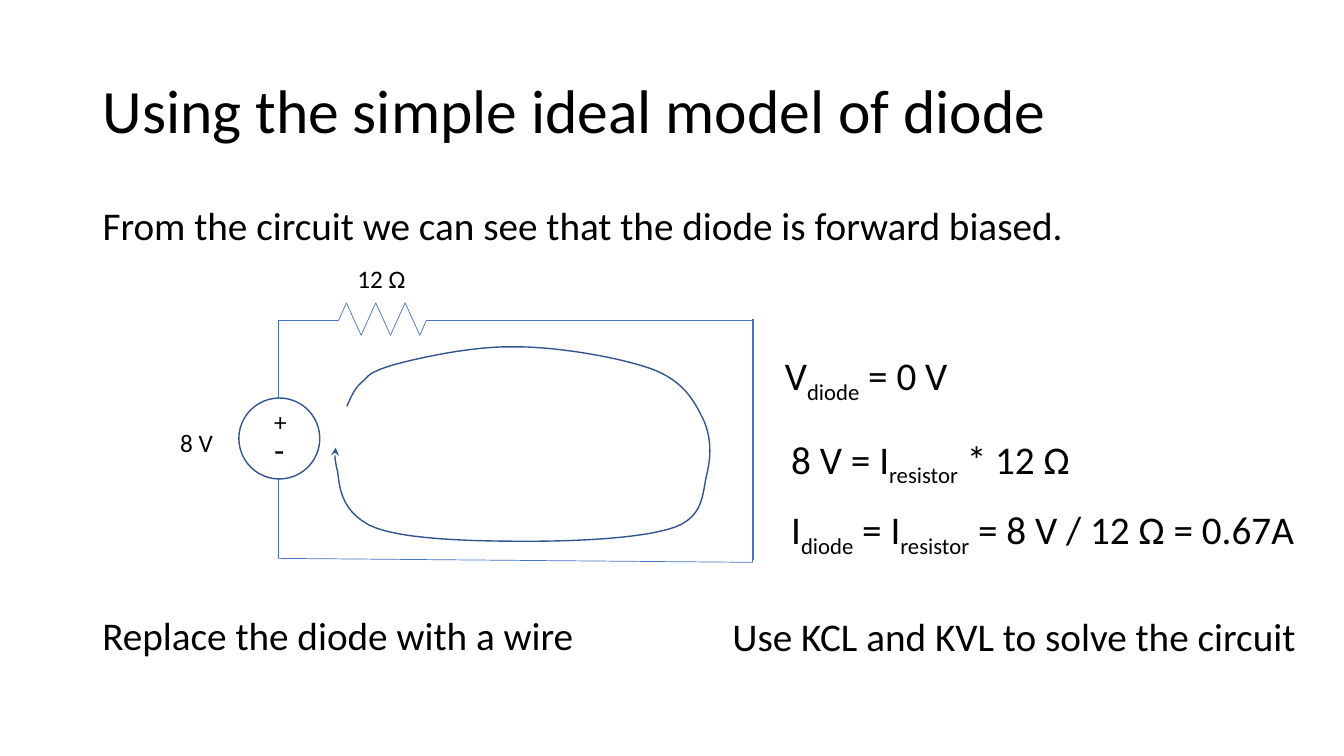
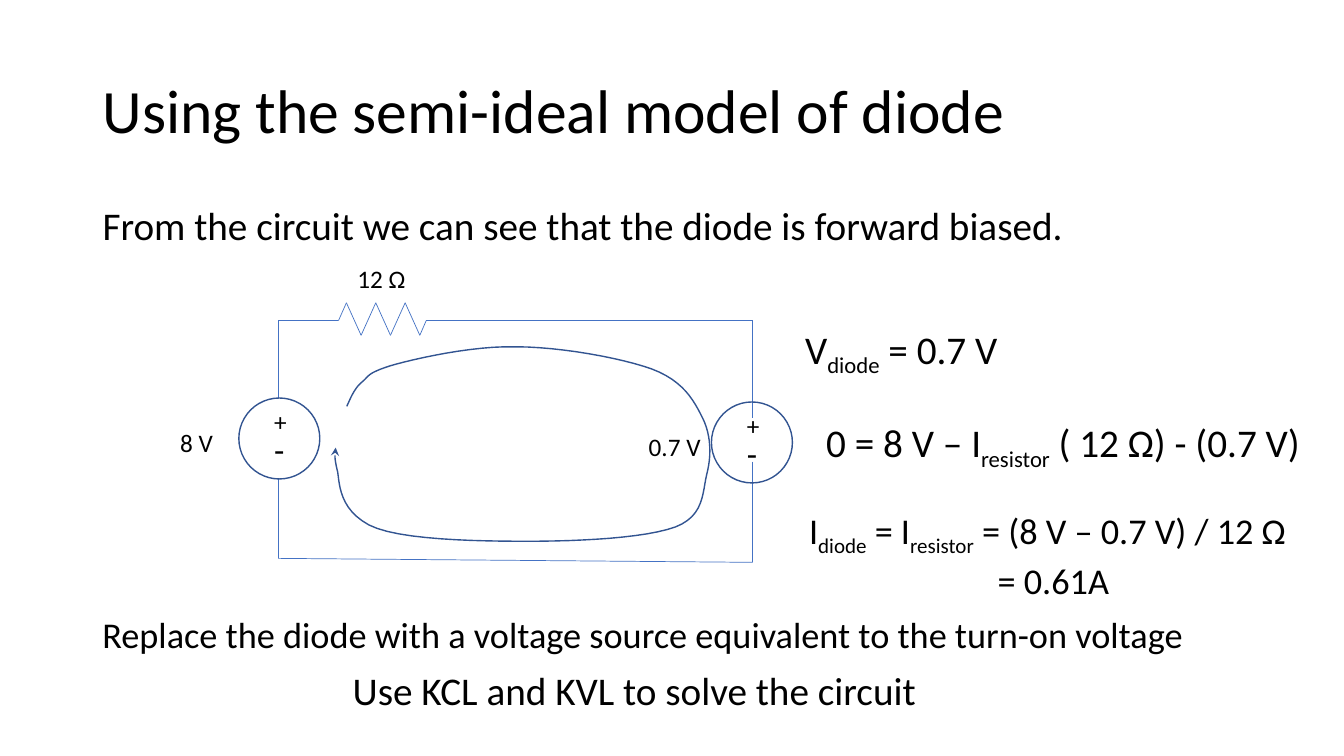
from itertools import pairwise

from lxml import etree
from pptx import Presentation
from pptx.dml.color import RGBColor
from pptx.enum import shapes, text
from pptx.oxml.ns import qn
from pptx.util import Cm, Pt

COLORS = {"text": "000000", "wire": "4472C4", "outline": "325491"}
FONT = "Calibri"

# Boxes are left, top, width, height in cm
TITLE_BOX = (2.33, 1.02, 29.21, 3.68)
INTRO_BOX = (2.33, 5.08, 29.21, 1.37)
INTRO = "From the circuit we can see that the diode is forward biased."
SOLVE = "Use KCL and KVL to solve the circuit"

# A line of text alternates between normal and subscript pieces
SLIDES = [
    {
        "title": "Using the simple ideal model of diode",
        "diode": "wire",
        "notes": [
            {"box": (2.33, 15.42, 13.34, 1.6), "lines": [("Replace the diode with a wire",)]},
            {"box": (19.53, 8.74, 13.72, 1.8), "lines": [("V", "diode", " = 0 V")]},
            {"box": (19.69, 10.85, 10.29, 1.8), "lines": [("8 V = I", "resistor", " * 12 Ω")]},
            {"box": (19.69, 12.62, 13.72, 1.8),
             "lines": [("I", "diode", " = I", "resistor", " = 8 V / 12 Ω = 0.67A")]},
            {"box": (18.21, 15.44, 15.06, 1.6), "lines": [(SOLVE,)]},
        ],
    },
    {
        "title": "Using the semi-ideal model of diode",
        "diode": "source",
        "notes": [
            {"box": (2.33, 15.42, 29.21, 1.37), "size": 25.9,
             "lines": [("Replace the diode with a voltage source equivalent to the turn-on voltage",)]},
            {"box": (20.04, 8.08, 7.42, 1.8), "lines": [("V", "diode", " = 0.7 V")]},
            {"box": (20.57, 10.44, 13.06, 1.57),
             "lines": [("0 = 8 V – I", "resistor", " ( 12 Ω) - (0.7 V)")]},
            {"box": (20.14, 12.8, 13.72, 2.51), "size": 25.9, "spacing": 0.8, "last_indent": 4.75,
             "lines": [("I", "diode", " = I", "resistor", " = (8 V – 0.7 V) / 12 Ω"), ("= 0.61A",)]},
            {"box": (8.64, 16.79, 15.06, 1.6), "lines": [(SOLVE,)]},
        ],
    },
]

LEFT, RIGHT, TOP = 7.01, 18.97, 8.08
RESISTOR_START, RESISTOR_END = 8.53, 10.74
WIRES = [
    ((LEFT, TOP), (LEFT, 10.03)),
    ((LEFT, 12.07), (LEFT, 14.07)),
    ((LEFT, TOP), (RESISTOR_START, TOP)),
    ((RESISTOR_END, TOP), (RIGHT, TOP)),
    ((LEFT, 14.07), (RIGHT, 14.17)),
    ((RIGHT, TOP), (RIGHT, 10.54)),
    ((RIGHT, 11.63), (RIGHT, 14.15)),
]
DIODE_WIRE = ((RIGHT, 8.03), (RIGHT, 14.12))
PEAK, VALLEY, HALF_WAVE = 7.63, 8.45, 0.37
ZIGZAG = [
    (RESISTOR_START, TOP),
    *((8.73 + HALF_WAVE * i, VALLEY if i % 2 else PEAK) for i in range(6)),
    (RESISTOR_END, TOP),
]

# The current loop: a start, then two control points and an end per curve
LOOP_START = (8.74, 10.24)
LOOP_CURVES = [
    ((8.84, 10.03), (8.92, 9.8), (9.12, 9.63)),
    ((9.32, 9.47), (9.22, 9.42), (9.83, 9.22)),
    ((10.44, 9.04), (11.91, 8.71), (13, 8.74)),
    ((14.12, 8.74), (15.65, 9.02), (16.43, 9.3)),
    ((17.22, 9.6), (17.48, 10.08), (17.7, 10.52)),
    ((17.93, 10.97), (17.93, 11.51), (17.81, 11.96)),
    ((17.7, 12.42), (17.75, 13), (17.02, 13.28)),
    ((16.26, 13.56), (14.6, 13.64), (13.31, 13.64)),
    ((12.04, 13.64), (10.03, 13.61), (9.3, 13.23)),
    ((8.56, 12.83), (8.56, 12.22), (8.51, 11.89)),
    ((8.43, 11.56), (8.43, 11.48), (8.46, 11.28)),
]
CURVE_STEPS = 12


def rgb(name):
    return RGBColor.from_string(COLORS[name])


def cm(values):
    return [Cm(v) for v in values]


def place(part, box):
    part.left, part.top, part.width, part.height = cm(box)


def style(paragraph, size, spacing=None, before=None):
    font = paragraph.font
    font.name, font.size, font.color.rgb = FONT, Pt(size), rgb("text")
    paragraph.alignment = text.PP_ALIGN.LEFT
    if spacing:
        paragraph.line_spacing = spacing
    if before is not None:
        paragraph.space_before = Pt(before)


def add_label(parent, words, box, size=18):
    frame = parent.add_textbox(*cm(box)).text_frame
    frame.word_wrap = True
    frame.text = words
    style(frame.paragraphs[0], size)


def add_note(slide, box, lines, size=28, spacing=0.9, last_indent=0):
    frame = slide.shapes.add_textbox(*cm(box)).text_frame
    frame.word_wrap = True
    for i, pieces in enumerate(lines):
        paragraph = frame.add_paragraph() if i else frame.paragraphs[0]
        style(paragraph, size, spacing, 10)
        for j, piece in enumerate(pieces):
            run = paragraph.add_run()
            run.text = piece
            if j % 2:
                run._r.get_or_add_rPr().set("baseline", "-25000")
    if last_indent:
        paragraph._p.get_or_add_pPr().set("marL", str(Cm(last_indent)))


def add_wire(parent, start, end, width=0.5):
    wire = parent.add_connector(shapes.MSO_CONNECTOR.STRAIGHT, *cm(start + end))
    wire.line.color.rgb, wire.line.width = rgb("wire"), Pt(width)
    etree.SubElement(wire._element.spPr, qn("a:effectLst"))


def outline(shape):
    shape.shadow.inherit = False
    shape.fill.background()
    shape.line.color.rgb, shape.line.width = rgb("outline"), Pt(1)


def add_source(slide, left, top):
    """Draw a voltage source with its polarity marks."""
    parts = slide.shapes.add_group_shape().shapes
    outline(parts.add_shape(shapes.MSO_SHAPE.OVAL, *cm((left, top, 2.04, 2.04))))
    add_label(parts, "+", (left + 0.64, top + 0.08, 0.91, 1.02))
    add_label(parts, "-", (left + 0.64, top + 0.66, 0.91, 1.27), 24)


def bezier(start, control_1, control_2, end):
    for step in range(1, CURVE_STEPS + 1):
        t = step / CURVE_STEPS
        weights = ((1 - t) ** 3, 3 * t * (1 - t) ** 2, 3 * t * t * (1 - t), t ** 3)
        corners = (start, control_1, control_2, end)
        yield tuple(Cm(sum(w * c[axis] for w, c in zip(weights, corners))) for axis in (0, 1))


def add_current_loop(slide):
    builder = slide.shapes.build_freeform(*cm(LOOP_START))
    start, points = LOOP_START, []
    for curve in LOOP_CURVES:
        points.extend(bezier(start, *curve))
        start = curve[-1]
    builder.add_line_segments(points, close=False)
    loop = builder.convert_to_shape()
    outline(loop)
    etree.SubElement(loop.line._get_or_add_ln(), qn("a:tailEnd"), type="stealth")


def add_circuit(slide, diode):
    for start, end in WIRES:
        add_wire(slide.shapes, start, end)
    resistor = slide.shapes.add_group_shape().shapes
    for start, end in pairwise(ZIGZAG):
        add_wire(resistor, start, end)
    add_label(slide.shapes, "12 Ω", (8.76, 6.5, 1.8, 1.02))
    add_source(slide, 6.02, 10.03)
    add_label(slide.shapes, "8 V", (4.29, 10.64, 1.8, 1.02))
    if diode == "wire":
        add_wire(slide.shapes, *DIODE_WIRE, width=1.25)
    else:
        add_source(slide, 17.93, 10.13)
        add_label(slide.shapes, "0.7 V", (16.1, 10.74, 2.24, 1.02))
    add_current_loop(slide)


def add_headings(slide, title):
    heading, intro = slide.placeholders
    for part, words, box in ((heading, title, TITLE_BOX), (intro, INTRO, INTRO_BOX)):
        place(part, box)
        part.text_frame.text = words
        part.text_frame.auto_size = text.MSO_AUTO_SIZE.NONE
    heading.text_frame.vertical_anchor = text.MSO_ANCHOR.MIDDLE
    style(heading.text_frame.paragraphs[0], 44, 0.9, 0)
    paragraph = intro.text_frame.paragraphs[0]
    style(paragraph, 28, 0.9, 10)
    properties = paragraph._p.get_or_add_pPr()
    properties.set("marL", "0")
    properties.set("indent", "0")
    bullet = etree.Element(qn("a:buNone"))
    properties.find(qn("a:spcBef")).addnext(bullet)


def main():
    deck = Presentation()
    deck.slide_width, deck.slide_height = Cm(33.87), Cm(19.05)
    for content in SLIDES:
        slide = deck.slides.add_slide(deck.slide_layouts[1])
        add_headings(slide, content["title"])
        add_circuit(slide, content["diode"])
        for note in content["notes"]:
            add_note(slide, **note)
    deck.save("out.pptx")


if __name__ == "__main__":
    main()
